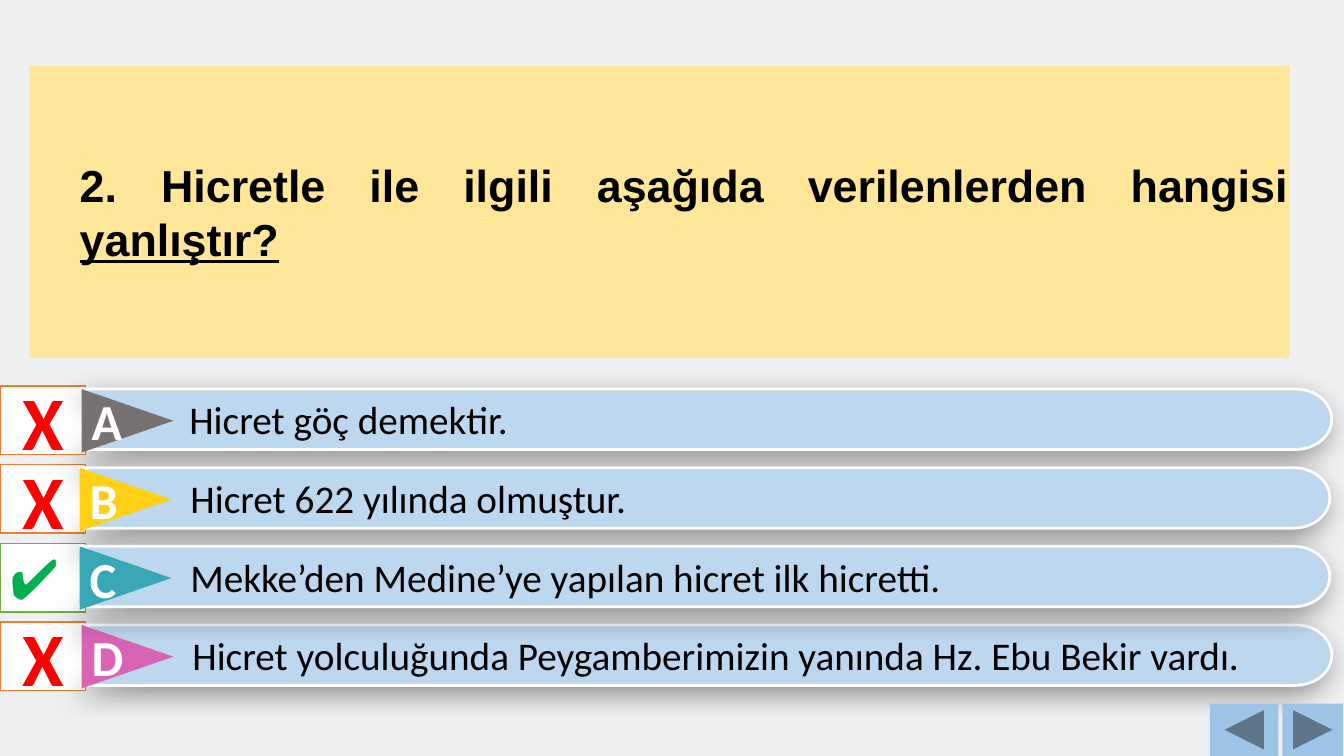
import math

from lxml import etree
from pptx import Presentation
from pptx import util as u
from pptx.dml.color import RGBColor
from pptx.enum import shapes, text
from pptx.oxml.ns import qn

KINDS = shapes.MSO_SHAPE
ALIGN = text.PP_ALIGN
LETTERS = "ABCD"
BAR_HEIGHT = 0.6

# Letter, left edge, triangle colour, answer, text indent; from back to front
ANSWERS = [
    ("A", 0.81, "777171", "Hicret göç demektir.", 0.97),
    ("B", 0.79, "FFD013", "Hicret 622 yılında olmuştur.", 1),
    ("D", 0.81, "D864B4",
     "Hicret yolculuğunda Peygamberimizin yanında Hz. Ebu Bekir vardı.", 1),
    ("C", 0.79, "38A7B5", "Mekke’den Medine’ye yapılan hicret ilk hicretti.", 1),
]
CORRECT = "C"


def rgb(color):
    return RGBColor.from_string(color)


class QuizSlide:
    """Holds the quiz style and the slide being filled."""

    body_font = "Calibri"
    title_font = "Arial"
    black = "000000"
    white = "FFFFFF"

    def __init__(self, prs):
        self.slide = prs.slides.add_slide(prs.slide_layouts[5])
        background = self.slide.background.fill
        background.solid()
        background.fore_color.rgb = rgb("EEF0F2")

    def paint(self, shape, fill, line=None, width=1):
        shape.shadow.inherit = False
        shape.fill.solid()
        shape.fill.fore_color.rgb = rgb(fill)
        if line:
            shape.line.color.rgb = rgb(line)
            shape.line.width = u.Pt(width)
        else:
            shape.line.fill.background()

    def add_wording(self, shape, runs, size, color, bold=False, align=ALIGN.LEFT,
                    font=None, indent=0):
        """Add (wording, underlined) runs as one paragraph."""
        frame = shape.text_frame
        frame.word_wrap = True
        frame.auto_size = text.MSO_AUTO_SIZE.NONE
        frame.vertical_anchor = text.MSO_ANCHOR.MIDDLE
        paragraph = frame.paragraphs[0]
        paragraph.alignment = align
        properties = paragraph._p.get_or_add_pPr()
        properties.set("marL", str(u.Inches(indent)))
        properties.set("indent", "0")
        for wording, underlined in runs:
            run = paragraph.add_run()
            run.text = wording
            run.font.name = font or self.body_font
            run.font.size = u.Pt(size)
            run.font.bold = bold
            run.font.underline = underlined
            run.font.color.rgb = rgb(color)

    def preset(self, parent, kind, left, top, width, height, fill, line=None):
        shape = parent.add_shape(kind, u.Inches(left), u.Inches(top),
                                 u.Inches(width), u.Inches(height))
        self.paint(shape, fill, line)
        return shape

    def question(self, runs):
        title = self.slide.shapes.title
        title.left, title.top = u.Inches(0.29), u.Inches(0.65)
        title.width, title.height = u.Inches(12.5), u.Inches(2.9)
        title.fill.solid()
        title.fill.fore_color.rgb = rgb("FFE699")
        frame = title.text_frame
        frame.margin_left = frame.margin_right = 0
        frame.margin_top = frame.margin_bottom = 0
        self.add_wording(title, runs, 32, self.black, True, ALIGN.JUSTIFY,
                         self.title_font, 0.5)

    def mark(self, top, correct):
        box = self.preset(self.slide.shapes, KINDS.RECTANGLE, 0, top, 0.85, 0.68,
                          self.white, "70AD47" if correct else "ED7D31")
        if correct:
            self.add_wording(box, [("✔", False)], 40, "00B050")
        else:
            self.add_wording(box, [("X", False)], 54, "FF0000", True, ALIGN.CENTER)

    def bar(self, parent, left, top):
        """Draw a bar with a notched left end and a rounded right end."""
        middle = top + BAR_HEIGHT / 2
        bend = left + 12.04
        outline = [(left, top)]
        for step in range(25):
            angle = math.pi * (step / 24 - 0.5)
            outline.append((bend + 0.36 * math.cos(angle),
                            middle + BAR_HEIGHT / 2 * math.sin(angle)))
        outline += [(left, top + BAR_HEIGHT), (left + 0.62, middle)]
        points = [(u.Inches(x), u.Inches(y)) for x, y in outline]
        builder = parent.build_freeform(*points[0])
        builder.add_line_segments(points[1:], close=True)
        bar = builder.convert_to_shape()
        self.paint(bar, "BDD7EE", self.white, 2)
        self.cast_shadow(bar)
        return bar

    def cast_shadow(self, shape):
        effects = shape._element.spPr.find(qn("a:effectLst"))
        shadow = etree.SubElement(
            effects, qn("a:outerShdw"), blurRad=str(u.Pt(20)), dist=str(u.Pt(7)),
            dir=str(135 * 60000), algn="tr", rotWithShape="0")
        color = etree.SubElement(shadow, qn("a:srgbClr"), val=self.black)
        etree.SubElement(color, qn("a:alpha"), val="40000")

    def answer(self, letter, left, top, color, wording, indent):
        group = self.slide.shapes.add_group_shape().shapes
        bar = self.bar(group, left, top)
        self.add_wording(bar, [(wording, False)], 28, self.black, indent=indent)
        pointer = self.preset(group, KINDS.ISOSCELES_TRIANGLE, left + 0.14,
                              top - 0.14, 0.63, 0.91, color)
        pointer.rotation = 90
        self.add_wording(pointer, [(letter, False)], 36, self.white, True,
                         ALIGN.CENTER)
        pointer.text_frame._txBody.bodyPr.set("vert", "vert270")

    def button(self, kind, left, width):
        self.preset(self.slide.shapes, kind, left, 6.98, width, 0.52, "9DC3E6")


def main():
    prs = Presentation()
    prs.slide_width, prs.slide_height = u.Inches(13.33), u.Inches(7.5)
    quiz = QuizSlide(prs)
    quiz.question([("2. Hicretle ile ilgili aşağıda verilenlerden hangisi ", False),
                   ("yanlıştır?", True)])
    for row, letter in enumerate(LETTERS):
        quiz.mark(3.83 + 0.78 * row, letter == CORRECT)
    for letter, left, color, wording, indent in ANSWERS:
        top = 3.86 + 0.78 * LETTERS.index(letter)
        quiz.answer(letter, left, top, color, wording, indent)
    quiz.button(KINDS.ACTION_BUTTON_BACK_OR_PREVIOUS, 12, 0.68)
    quiz.button(KINDS.ACTION_BUTTON_FORWARD_OR_NEXT, 12.72, 0.6)
    prs.save("out.pptx")


if __name__ == "__main__":
    main()
